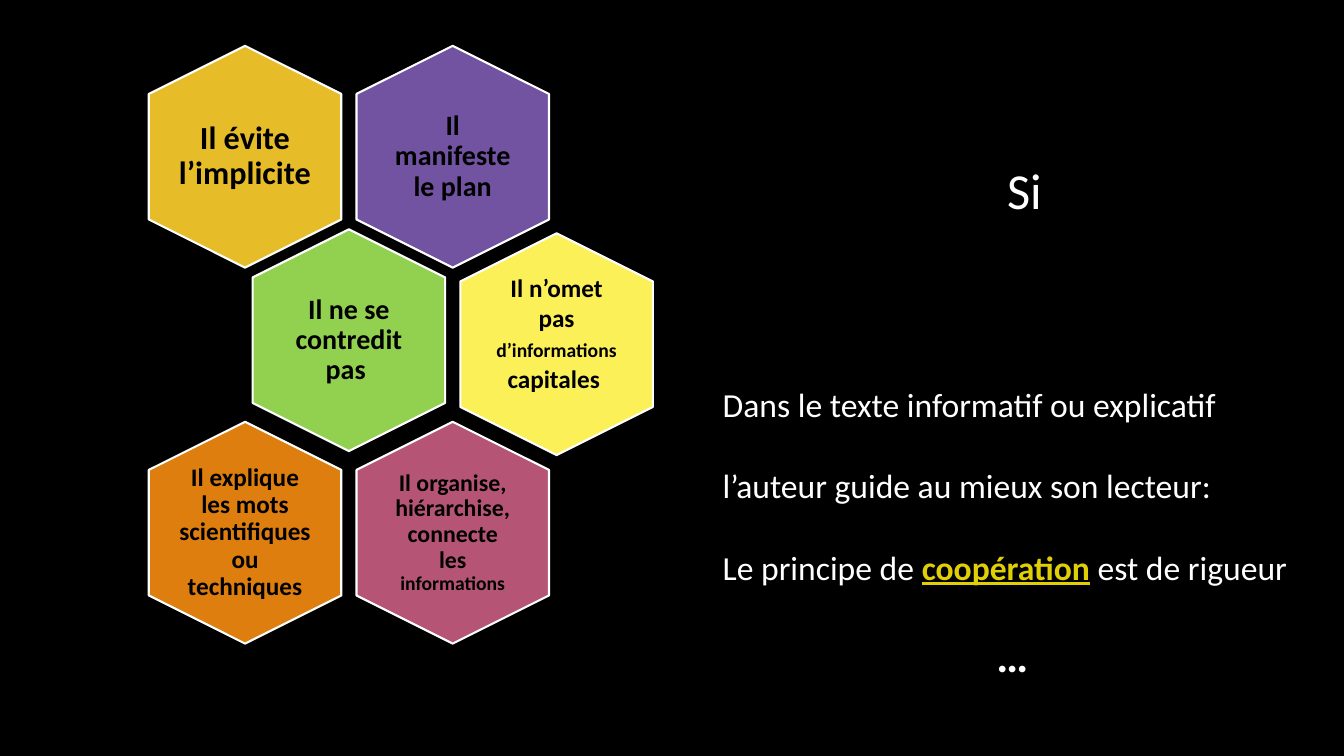
from pptx import Presentation
from pptx.dml.color import RGBColor
from pptx.enum import shapes, text
from pptx.util import Inches, Pt

COLORS = {
    "black": "000000", "white": "FFFFFF", "accent": "DFCF04",
    "gold": "E7BC29", "purple": "7153A1", "green": "92D050",
    "yellow": "FCF059", "orange": "DD7E0E", "rose": "B55475",
}
LEFT, HALF_STEP = 1.33, 1.03
HEX_WIDTH, HEX_HEIGHT = 2.2, 1.91
LABEL_DX, LABEL_DY = 0.44, 0.2
LABEL_WIDTH, LABEL_HEIGHT = 1.32, 1.51
BLANK_LINE = 29.3

HEXAGONS = [
    (2, 0.6, "purple", 0.08, 0.08, 0.9, [("Il manifeste le plan", 20)]),
    (0, 0.6, "gold", 0, 0, 0.9, [("Il évite l’implicite", 23)]),
    (1, 2.42, "green", 0.08, 0.08, 0.9, [("Il ne se contredit pas ", 20)]),
    (3, 2.46, "yellow", 0, 0.23, 1.0,
     [("Il n’omet pas ", 18), ("d’informations", 14), (" capitales ", 18)]),
    (2, 4.33, "rose", 0.07, 0.07, 0.9,
     [("Il organise, hiérarchise, connecte les ", 17), ("informations", 14)]),
    (0, 4.33, "orange", 0, 0, 0.9,
     [("Il explique les mots scientifiques ou techniques", 18)]),
]


class SlideBuilder:
    font_name = "Calibri"

    def __init__(self, page):
        self.page = page

    def color(self, name):
        return RGBColor.from_string(COLORS[name])

    def background(self, name):
        fill = self.page.background.fill
        fill.solid()
        fill.fore_color.rgb = self.color(name)

    def hexagon(self, left, top, fill):
        shape = self.page.shapes.add_shape(
            shapes.MSO_SHAPE.HEXAGON, Inches(left), Inches(top),
            Inches(HEX_WIDTH), Inches(HEX_HEIGHT))
        shape.rotation = 90
        shape.adjustments[0] = 0.25
        shape.adjustments[1] = 1.1547
        shape.shadow.inherit = False
        shape.fill.solid()
        shape.fill.fore_color.rgb = self.color(fill)
        shape.line.color.rgb = self.color("white")
        shape.line.width = Pt(1.5)

    def text_box(self, left, top, width, height, **frame_format):
        box = self.page.shapes.add_textbox(
            Inches(left), Inches(top), Inches(width), Inches(height))
        frame = box.text_frame
        frame.word_wrap = True
        for name, value in frame_format.items():
            setattr(frame, name, value)
        return frame

    def span(self, para, words, size, color, **font_format):
        span = para.add_run()
        span.text = words
        settings = {"name": self.font_name, "size": Pt(size), **font_format}
        for name, value in settings.items():
            setattr(span.font, name, value)
        span.font.color.rgb = self.color(color)

    def label(self, left, top, inset, bottom, spacing, spans):
        side = Inches(inset)
        frame = self.text_box(
            left, top, LABEL_WIDTH, LABEL_HEIGHT,
            vertical_anchor=text.MSO_ANCHOR.MIDDLE,
            margin_left=side, margin_right=side,
            margin_top=side, margin_bottom=Inches(bottom))
        para = frame.paragraphs[0]
        para.alignment = text.PP_ALIGN.CENTER
        para.line_spacing = spacing
        for words, size in spans:
            self.span(para, words, size, "black", bold=True)

    def message(self):
        frame = self.text_box(7.07, 1.53, 6.04, 5.59,
                              margin_left=Inches(2.92))
        frame.margin_left = Inches(0.1)
        heading = frame.paragraphs[0]
        heading._p.get_or_add_pPr().set("marL", str(Inches(2.82)))
        self.span(heading, "Si", 36, "white")
        lines = [
            (4, [("Dans le texte informatif ou explicatif", "white", {})]),
            (1, [("l’auteur guide au mieux son lecteur:", "white", {})]),
            (1, [("Le principe de ", "white", {}),
                 ("coopération", "accent", {"bold": True, "underline": True}),
                 (" est de rigueur", "white", {})]),
        ]
        for blanks, spans in lines:
            para = frame.add_paragraph()
            para.space_before = Pt(blanks * BLANK_LINE)
            for words, color, font_format in spans:
                self.span(para, words, 24, color, **font_format)
        ending = frame.add_paragraph()
        ending.alignment = text.PP_ALIGN.CENTER
        ending.space_before = Pt(BLANK_LINE)
        self.span(ending, "… ", 32, "white", bold=True)


def main():
    deck = Presentation()
    deck.slide_width, deck.slide_height = Inches(13.33), Inches(7.5)
    builder = SlideBuilder(deck.slides.add_slide(deck.slide_layouts[6]))
    builder.background("black")
    builder.message()
    for column, top, fill, *label in HEXAGONS:
        left = LEFT + column * HALF_STEP
        builder.hexagon(left, top, fill)
        builder.label(left + LABEL_DX, top + LABEL_DY, *label)
    deck.save("out.pptx")


if __name__ == "__main__":
    main()
